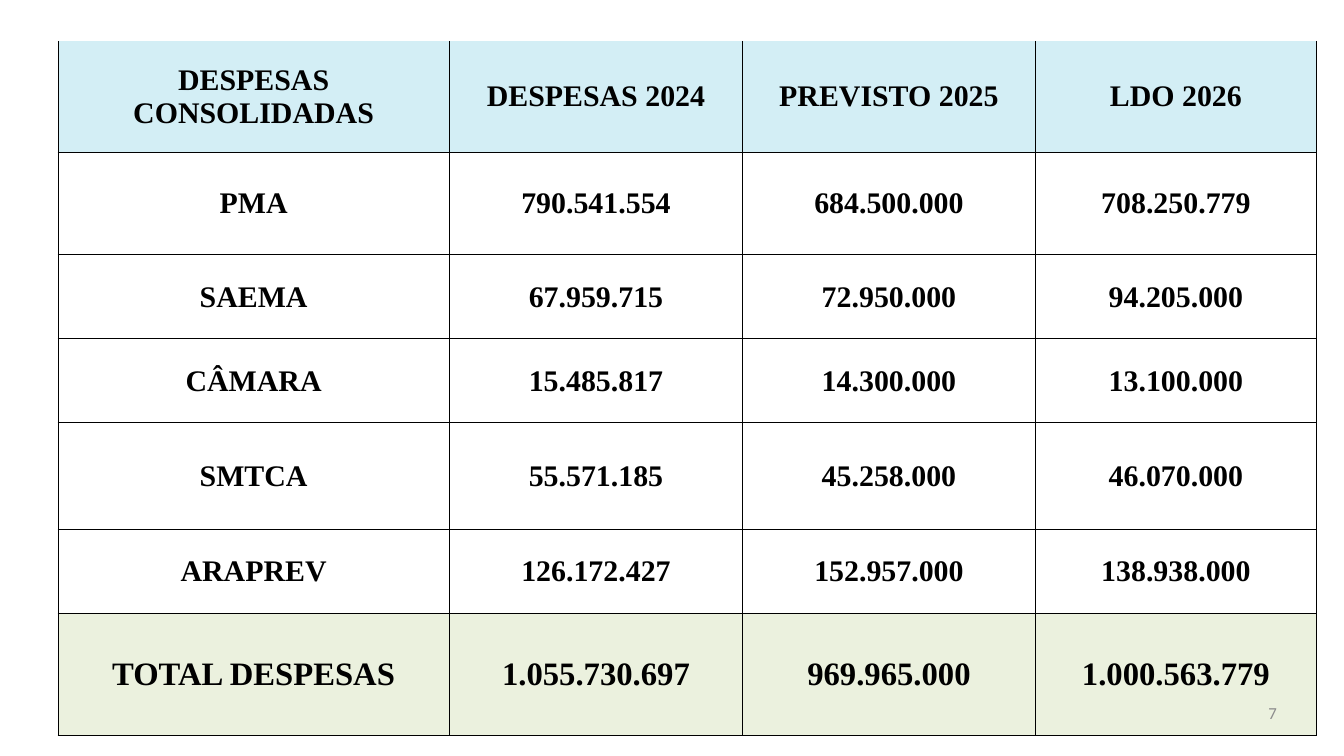
"""Build the slide with the consolidated expenses table."""
from dataclasses import dataclass

from lxml import etree
from pptx import Presentation
from pptx.dml.color import RGBColor
from pptx.enum.text import MSO_ANCHOR, MSO_AUTO_SIZE, PP_ALIGN
from pptx.oxml.ns import qn
from pptx.slide import Slide
from pptx.table import Table, _Cell
from pptx.util import Inches, Pt

MIDDLE = MSO_ANCHOR.MIDDLE
CENTER = PP_ALIGN.CENTER
RIGHT = PP_ALIGN.RIGHT
GROW = MSO_AUTO_SIZE.SHAPE_TO_FIT_TEXT

BLACK = RGBColor(0x00, 0x00, 0x00)
GRAY = RGBColor(0x8C, 0x8C, 0x8C)
BLUE = RGBColor(0xD3, 0xEE, 0xF5)
GREEN = RGBColor(0xEB, 0xF1, 0xDE)

SIDES = "LRTB"
WIDTHS = (0.44, 5.83, 4.36, 4.36, 4.18)
SPACER = 0.58


@dataclass(frozen=True)
class Row:
    height: float
    texts: tuple[str, ...]
    size: int = 32
    fill: RGBColor | None = None
    sides: str = SIDES


ROWS = (
    Row(1.65, ("DESPESAS CONSOLIDADAS", "DESPESAS 2024", "PREVISTO 2025", "LDO 2026"),
        fill=BLUE, sides="LRB"),
    Row(1.53, ("PMA", "790.541.554", "684.500.000", "708.250.779")),
    Row(1.25, ("SAEMA", "67.959.715", "72.950.000", "94.205.000")),
    Row(1.25, ("CÂMARA", "15.485.817", "14.300.000", "13.100.000")),
    Row(1.58, ("SMTCA", "55.571.185", "45.258.000", "46.070.000")),
    Row(1.25, ("ARAPREV", "126.172.427", "152.957.000", "138.938.000")),
    Row(1.82, ("TOTAL DESPESAS", "1.055.730.697", "969.965.000", "1.000.563.779"),
        size=35, fill=GREEN),
)


def style_cell(cell: _Cell, sides: str, fill: RGBColor | None = None) -> None:
    """Draw the named borders, clear the others and set the fill."""
    props = cell._tc.get_or_add_tcPr()
    for side in SIDES:
        line = etree.SubElement(props, qn(f"a:ln{side}"), w=str(Pt(0.5)))
        if side in sides:
            paint = etree.SubElement(line, qn("a:solidFill"))
            etree.SubElement(paint, qn("a:srgbClr"), val=str(BLACK))
        else:
            etree.SubElement(line, qn("a:noFill"))
    if fill is None:
        cell.fill.background()
    else:
        cell.fill.solid()
        cell.fill.fore_color.rgb = fill


def write_cell(cell: _Cell, text: str, size: int) -> None:
    """Write centred bold text in a cell."""
    cell.margin_left = cell.margin_right = cell.margin_top = Inches(0.01)
    cell.margin_bottom = 0
    cell.vertical_anchor = MIDDLE
    cell.text = text
    para = cell.text_frame.paragraphs[0]
    para.alignment = CENTER
    font = para.font
    font.name, font.size, font.bold = "Times New Roman", Pt(size), True
    font.color.rgb = BLACK


def fill_table(table: Table) -> None:
    """Size and fill the whole table."""
    table.first_row = table.horz_banding = False
    for col, width in zip(table.columns, WIDTHS):
        col.width = Inches(width)
    table.rows[0].height = Inches(SPACER)
    for c in range(len(WIDTHS)):
        style_cell(table.cell(0, c), "")
    for r, row in enumerate(ROWS, 1):
        table.rows[r].height = Inches(row.height)
        style_cell(table.cell(r, 0), "R")
        for c, text in enumerate(row.texts, 1):
            cell = table.cell(r, c)
            style_cell(cell, row.sides, row.fill)
            write_cell(cell, text, row.size)
    table.cell(0, 0).merge(table.cell(0, len(WIDTHS) - 1))
    table.cell(3, 0).merge(table.cell(4, 0))


def add_number(slide: Slide, text: str) -> None:
    """Add the page number at the lower right."""
    box = slide.shapes.add_textbox(Inches(14.4), Inches(10.46), Inches(4.6), Inches(0.56))
    frame = box.text_frame
    frame.word_wrap = True
    frame.auto_size = GROW
    frame.margin_left = frame.margin_right = 0
    frame.margin_top = frame.margin_bottom = 0
    para = frame.paragraphs[0]
    para.text = text
    para.alignment = RIGHT
    para.font.name, para.font.size = "Calibri", Pt(18)
    para.font.color.rgb = GRAY


def main() -> None:
    """Build and save the deck."""
    deck = Presentation()
    deck.slide_width, deck.slide_height = Inches(20), Inches(11.25)
    slide = deck.slides.add_slide(deck.slide_layouts[6])
    height = SPACER + sum(row.height for row in ROWS)
    frame = slide.shapes.add_table(
        len(ROWS) + 1, len(WIDTHS), Inches(0.42), Inches(0.03),
        Inches(sum(WIDTHS)), Inches(height))
    fill_table(frame.table)
    add_number(slide, "7")
    deck.save("out.pptx")


if __name__ == "__main__":
    main()
